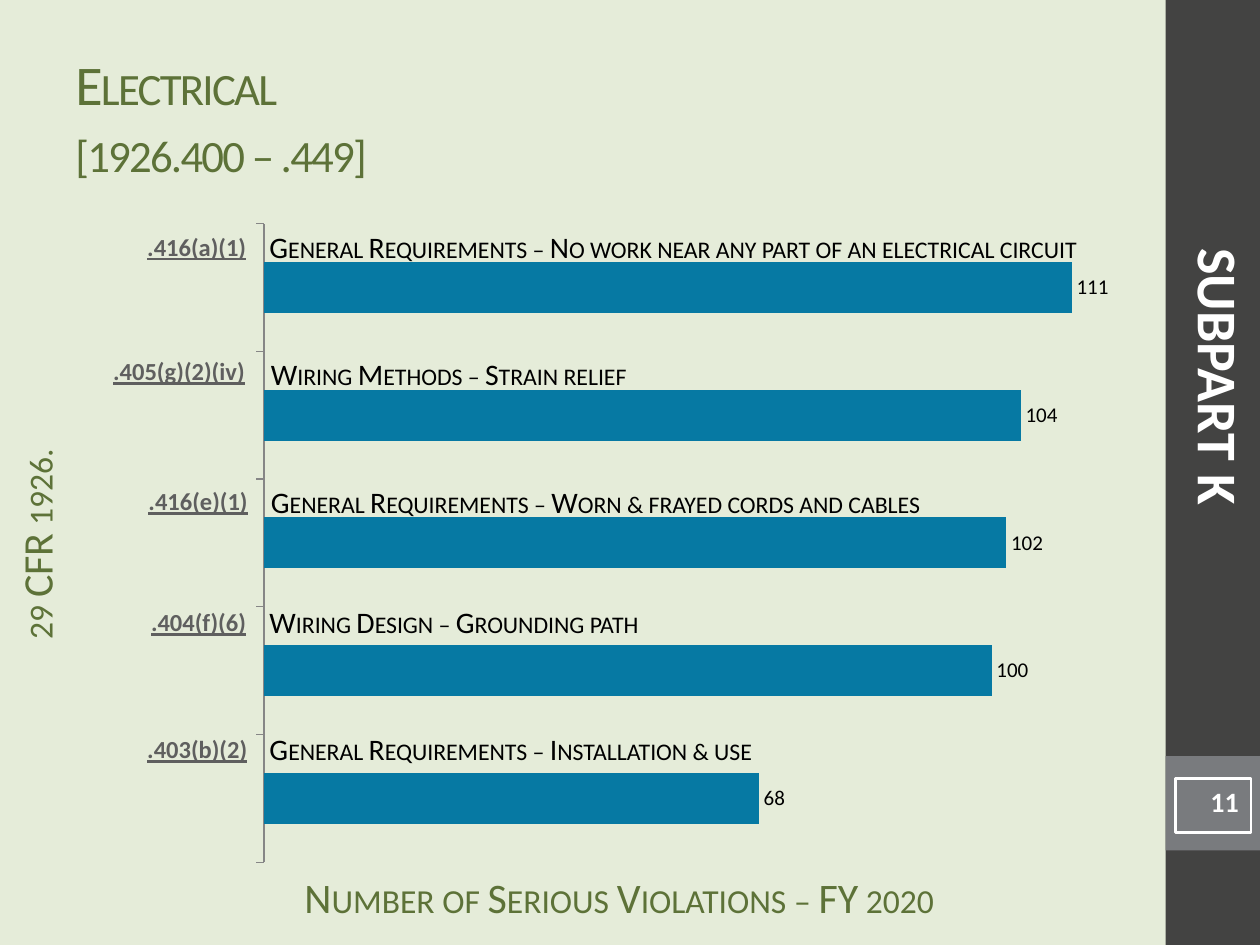
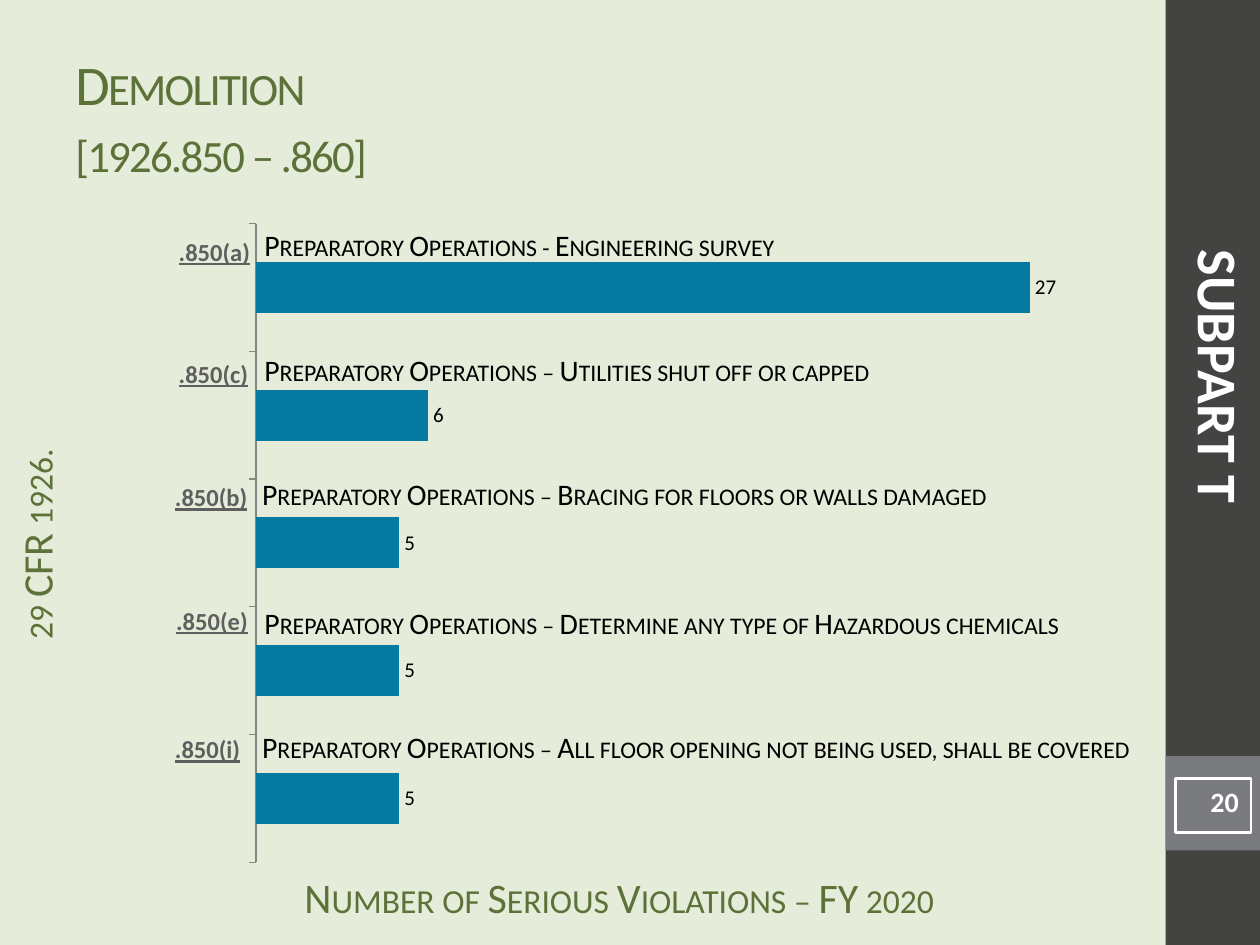
"""Build two slides of bar charts on serious violations by subpart."""
from dataclasses import dataclass

from lxml import etree
from pptx import Presentation
from pptx import util as u
from pptx.chart.data import CategoryChartData
from pptx.dml.color import RGBColor
from pptx.enum import chart as ch
from pptx.enum import shapes, text
from pptx.oxml.ns import qn

SCALE = 9144
PAD = (10, 5, 10, 5)
FLUSH = (0, 0, 0, 0)
SNUG = (10, 0, 10, 5)
LEFT, MID, RIGHT = text.PP_ALIGN.LEFT, text.PP_ALIGN.CENTER, text.PP_ALIGN.RIGHT


@dataclass(frozen=True)
class Theme:
    """Colours and type sizes shared by the slides."""
    font: str = "Calibri"
    back: str = "E5ECD9"
    band: str = "434342"
    block: str = "797B7E"
    green: str = "5D7238"
    bar: str = "0679A3"
    axis: str = "868686"
    cite: str = "5F5F5F"
    black: str = "000000"
    white: str = "FFFFFF"
    title: int = 32
    foot: int = 24
    head: int = 17
    page: int = 16
    code: int = 14
    label: int = 12


T = Theme()


@dataclass(frozen=True)
class Row:
    """One cited rule: its code, its heading and its count."""
    code: str
    spot: tuple
    head: str
    box: tuple
    count: int
    pad: tuple = PAD


@dataclass(frozen=True)
class Part:
    """The content of one slide."""
    name: str
    span: str
    mark: str
    page: str
    plot: tuple
    top: int
    rows: tuple


PARTS = (
    Part("Electrical", "[1926.400 – .449]", "SUBPART K", "11",
         (195, 167, 722, 528), 120, (
             Row(".416(a)(1)", (107, 179, 122, 34),
                 "General Requirements – No work near any part of an electrical circuit",
                 (204, 177, 690, 39), 111),
             Row(".405(g)(2)(iv)", (80, 278, 150, 34),
                 "Wiring Methods – Strain relief",
                 (215, 282, 517, 26), 104, FLUSH),
             Row(".416(e)(1)", (108, 381, 125, 34),
                 "General Requirements – Worn & frayed cords and cables",
                 (215, 384, 558, 29), 102, FLUSH),
             Row(".404(f)(6)", (110, 477, 118, 34),
                 "Wiring Design – Grounding path",
                 (204, 474, 583, 39), 100),
             Row(".403(b)(2)", (107, 578, 119, 34),
                 "General Requirements – Installation & use",
                 (204, 575, 419, 39), 68))),
    Part("Demolition", "[1926.850 – .860]", "SUBPART T", "20",
         (189, 167, 711, 528), 30, (
             Row(".850(a)", (132, 183, 79, 34),
                 "Preparatory Operations - Engineering survey",
                 (200, 175, 650, 39), 27),
             Row(".850(c)", (132, 280, 79, 34),
                 "Preparatory Operations – Utilities shut off or capped",
                 (200, 274, 533, 39), 6),
             Row(".850(b)", (129, 378, 79, 34),
                 "Preparatory Operations – Bracing for floors or walls damaged",
                 (208, 378, 700, 33), 5, FLUSH),
             Row(".850(e)", (130, 476, 79, 34),
                 "Preparatory Operations – Determine any type of Hazardous chemicals",
                 (200, 475, 669, 39), 5),
             Row(".850(i)", (129, 578, 79, 34),
                 "Preparatory Operations – All floor opening not being used, shall be covered",
                 (208, 578, 708, 28), 5, FLUSH))),
)


def px(*nums):
    """Turn px into EMU."""
    return [u.Emu(n * SCALE) for n in nums]


def rgb(code):
    """Turn a hex code into a colour."""
    return RGBColor.from_string(code)


def write(shape, words, size, color, align=LEFT, pad=PAD, bold=False,
          line=False, caps=False, space=0, wrap=True):
    """Put one styled paragraph into a shape."""
    frame = shape.text_frame
    frame.word_wrap = wrap
    frame.vertical_anchor = text.MSO_ANCHOR.TOP
    (frame.margin_left, frame.margin_top,
     frame.margin_right, frame.margin_bottom) = px(*pad)
    para = frame.paragraphs[0]
    para.text = words
    para.alignment = align
    font = para.font
    font.name, font.size, font.bold = T.font, u.Pt(size), bold
    font.underline = line
    font.color.rgb = rgb(color)
    props = para._p.pPr.find(qn("a:defRPr"))
    if caps:
        props.set("cap", "small")
    if space:
        props.set("spc", str(space))
    return frame


def label(slide, box, words, size, color, turn=0, **style):
    """Add a text box, turned if asked."""
    shape = slide.shapes.add_textbox(*px(*box))
    shape.rotation = turn
    return write(shape, words, size, color, **style)


def block(slide, box, fill=None, line=None):
    """Add a plain rectangle."""
    shape = slide.shapes.add_shape(shapes.MSO_SHAPE.RECTANGLE, *px(*box))
    shape.shadow.inherit = False
    if fill:
        shape.fill.solid()
        shape.fill.fore_color.rgb = rgb(fill)
    else:
        shape.fill.background()
    if line:
        shape.line.color.rgb = rgb(line)
        shape.line.width = u.Pt(1.5)
    else:
        shape.line.fill.background()
    return shape


def fit(chart):
    """Set the inner plot area by an even margin."""
    area = chart._chartSpace.chart.plotArea
    for old in area.findall(qn("c:layout")):
        area.remove(old)
    outer = etree.Element(qn("c:layout"))
    inner = etree.SubElement(outer, qn("c:manualLayout"))
    pairs = (("layoutTarget", "inner"), ("xMode", "edge"), ("yMode", "edge"),
             ("x", "0.02"), ("y", "0.02"), ("w", "0.96"), ("h", "0.96"))
    for tag, val in pairs:
        etree.SubElement(inner, qn("c:" + tag)).set("val", val)
    area.insert(0, outer)


def bars(slide, part):
    """Add the bar chart, first row on top."""
    data = CategoryChartData()
    data.categories = [str(n + 1) for n in range(len(part.rows))]
    data.add_series("Series 1", [row.count for row in reversed(part.rows)])
    chart = slide.shapes.add_chart(
        ch.XL_CHART_TYPE.BAR_CLUSTERED, *px(*part.plot), data).chart
    chart.has_legend = chart.has_title = False
    chart.font.name, chart.font.size = T.font, u.Pt(T.label)
    chart.font.color.rgb = rgb(T.black)
    cat, val = chart.category_axis, chart.value_axis
    cat.tick_label_position = ch.XL_TICK_LABEL_POSITION.NONE
    cat.major_tick_mark = ch.XL_TICK_MARK.OUTSIDE
    cat.format.line.color.rgb = rgb(T.axis)
    cat.format.line.width = u.Pt(0.75)
    val.minimum_scale, val.maximum_scale = 0, part.top
    val.has_major_gridlines = val.visible = False
    plot = chart.plots[0]
    plot.gap_width = 150
    plot.vary_by_categories = False
    plot.has_data_labels = True
    plot.data_labels.show_value = True
    plot.data_labels.position = ch.XL_LABEL_POSITION.OUTSIDE_END
    plot.data_labels.font.size = u.Pt(T.label)
    fill = plot.series[0].format.fill
    fill.solid()
    fill.fore_color.rgb = rgb(T.bar)
    fit(chart)


def frame(slide, part):
    """Add the background, side band, title, axis names and page number."""
    fill = slide.background.fill
    fill.solid()
    fill.fore_color.rgb = rgb(T.back)
    block(slide, (925, 0, 75, 750), T.band)
    block(slide, (925, 600, 75, 75), T.block)
    names = dict(size=T.foot, color=T.green, align=MID, pad=SNUG, caps=True)
    label(slide, (208, 692, 567, 33),
          "Number of Serious Violations – FY 2020", **names)
    label(slide, (-172, 403, 419, 58), "29 CFR 1926.", turn=270, **names)
    title = label(slide, (50, 30, 833, 125), f"{part.name}\v{part.span}",
                  T.title, T.green, caps=True, space=-100)
    title.vertical_anchor = text.MSO_ANCHOR.MIDDLE
    write(block(slide, (933, 618, 60, 43), line=T.white), part.page,
          T.page, T.white, align=RIGHT, bold=True)
    label(slide, (669, 267, 598, 64), part.mark, T.title, T.white,
          turn=90, align=MID, bold=True)


def main():
    """Build and save the slides."""
    deck = Presentation()
    deck.slide_width, deck.slide_height = px(1000, 750)
    for part in PARTS:
        slide = deck.slides.add_slide(deck.slide_layouts[6])
        frame(slide, part)
        bars(slide, part)
        for row in part.rows:
            label(slide, row.box, row.head, T.head, T.black,
                  pad=row.pad, caps=True)
            label(slide, row.spot, row.code, T.code, T.cite,
                  bold=True, line=True, wrap=False)
    deck.save("out.pptx")


if __name__ == "__main__":
    main()
